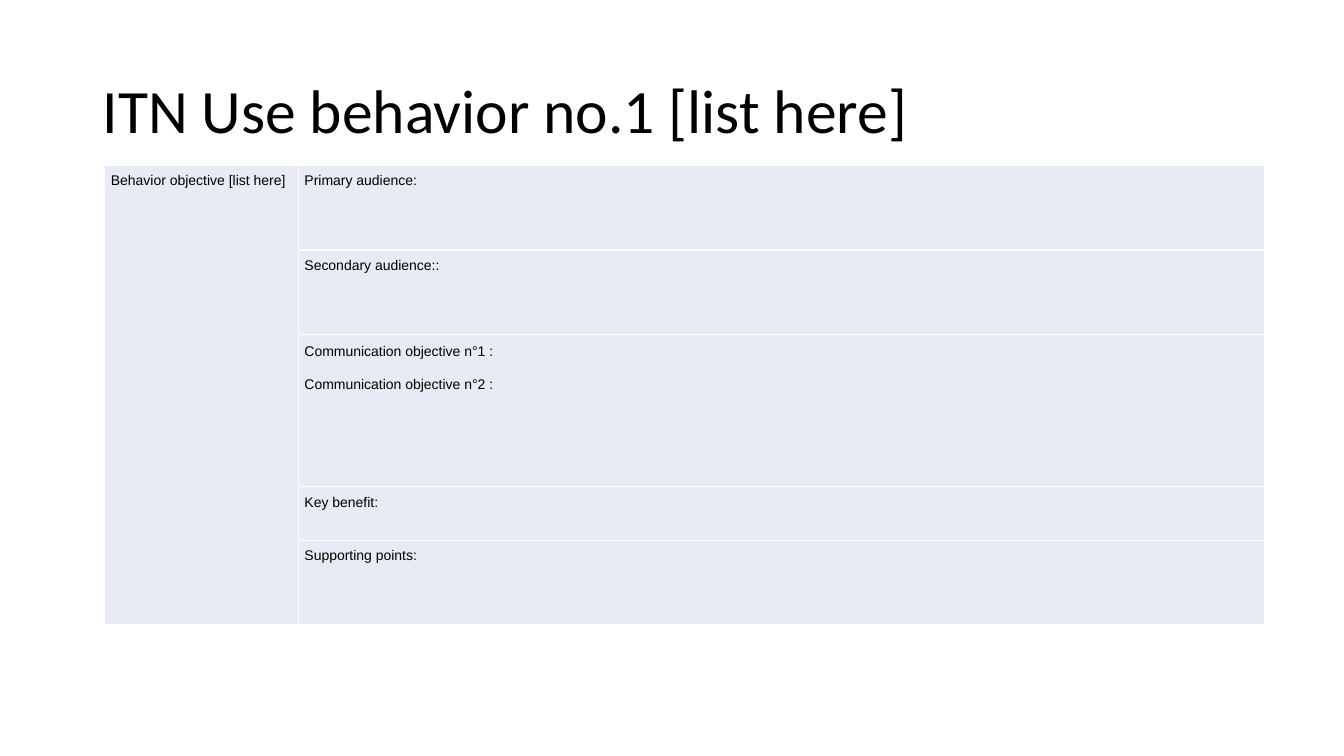
from pptx import Presentation
from pptx import util as u
from pptx.dml.color import RGBColor
from pptx.enum import text
from pptx.oxml import parse_xml
from pptx.oxml.ns import nsdecls

PX = 9144  # EMU per px, 100 px to the inch
COLORS = {"ink": "000000", "cell": "E8EBF5", "border": "FFFFFF"}
TITLE_FONT = {"name": "Calibri", "size": u.Pt(44)}
CELL_FONT = {"name": "Arial", "size": u.Pt(10)}
TITLE_FRAME = {"word_wrap": True, "vertical_anchor": text.MSO_ANCHOR.MIDDLE}
CELL_MARGINS = {"margin_left": 6 * PX, "margin_right": 4 * PX,
                "margin_top": 7 * PX, "margin_bottom": 7 * PX}
TABLE_FLAGS = {"first_row": False, "horz_banding": False}

COLUMN_WIDTHS = [192, 958]
OBJECTIVE = "Behavior objective [list here]"
# Row height, then each paragraph with its line spacing and space before in points
BRIEF_ROWS = [
    (84, [("Primary audience:", 1.06, 0)]),
    (84, [("Secondary audience::", 1.06, 0)]),
    (151, [("Communication objective n°1 :", 1.15, 0),
           ("Communication objective n°2 :", 1.06, 12)]),
    (53, [("Key benefit:", 1.06, 0)]),
    (84, [("Supporting points:", 1.06, 0)]),
]


def apply(target, values):
    for name, value in values.items():
        setattr(target, name, value)


class SlideBuilder:
    def __init__(self, deck):
        self.slide = deck.slides.add_slide(deck.slide_layouts[6])

    def add_paragraphs(self, frame, paragraphs, font):
        for index, (words, spacing, before) in enumerate(paragraphs):
            para = frame.add_paragraph() if index else frame.paragraphs[0]
            apply(para, {"line_spacing": spacing, "space_before": u.Pt(before)})
            span = para.add_run()
            span.text = words
            apply(span.font, font)
            span.font.color.rgb = RGBColor.from_string(COLORS["ink"])

    def title(self, words, left, top, width, height):
        box = self.slide.shapes.add_textbox(left * PX, top * PX, width * PX, height * PX)
        apply(box.text_frame, TITLE_FRAME)
        self.add_paragraphs(box.text_frame, [(words, 0.9, 0)], TITLE_FONT)

    def style_cell(self, cell):
        apply(cell, CELL_MARGINS)
        properties = cell._tc.get_or_add_tcPr()
        for side in ("lnL", "lnR", "lnT", "lnB"):
            properties.append(parse_xml(
                f'<a:{side} {nsdecls("a")} w="{u.Pt(1)}"><a:solidFill>'
                f'<a:srgbClr val="{COLORS["border"]}"/></a:solidFill></a:{side}>'))
        cell.fill.solid()
        cell.fill.fore_color.rgb = RGBColor.from_string(COLORS["cell"])

    def brief_table(self, left, top, widths, heading, rows):
        """Add a table whose first column is one merged heading cell."""
        table = self.slide.shapes.add_table(
            len(rows), len(widths), left * PX, top * PX,
            sum(widths) * PX, sum(height for height, _ in rows) * PX).table
        apply(table, TABLE_FLAGS)
        for column, width in zip(table.columns, widths):
            column.width = width * PX
        for cell in table.iter_cells():
            self.style_cell(cell)
        for index, (height, paragraphs) in enumerate(rows):
            table.rows[index].height = height * PX
            self.add_paragraphs(table.cell(index, 1).text_frame, paragraphs, CELL_FONT)
        table.cell(0, 0).merge(table.cell(len(rows) - 1, 0))
        self.add_paragraphs(table.cell(0, 0).text_frame, [(heading, 1.06, 0)], CELL_FONT)


def main():
    deck = Presentation()
    apply(deck, {"slide_width": 1333 * PX, "slide_height": 750 * PX})
    builder = SlideBuilder(deck)
    builder.title("ITN Use behavior no.1 [list here]", 92, 40, 1150, 145)
    builder.brief_table(104, 164, COLUMN_WIDTHS, OBJECTIVE, BRIEF_ROWS)
    deck.save("out.pptx")


if __name__ == "__main__":
    main()
